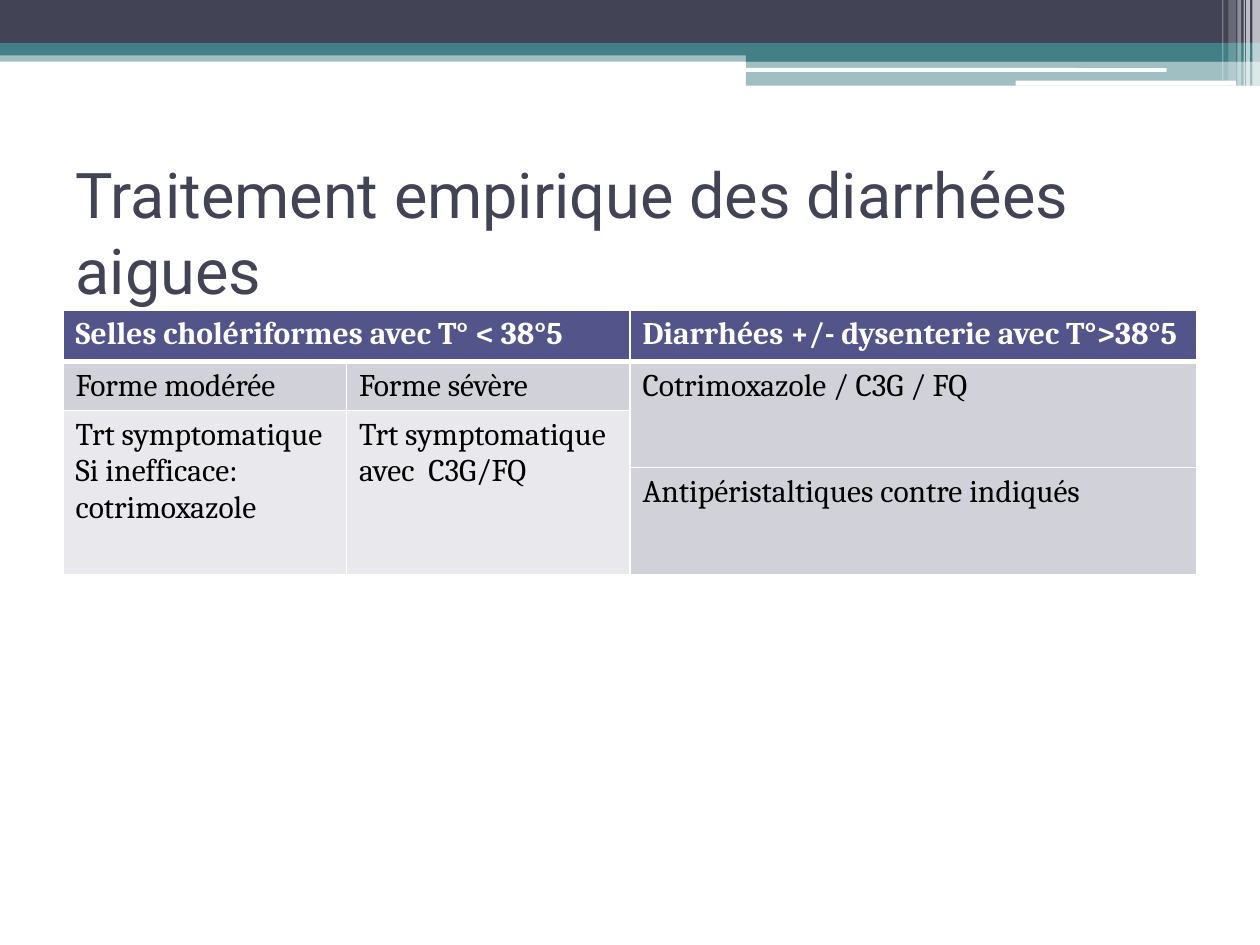
from lxml import etree
from pptx import Presentation
from pptx.dml.color import RGBColor
from pptx.enum.shapes import MSO_SHAPE
from pptx.enum.text import MSO_ANCHOR, MSO_AUTO_SIZE, PP_ALIGN
from pptx.oxml.ns import qn
from pptx.util import Inches, Pt

RECT, ROUNDED = MSO_SHAPE.RECTANGLE, MSO_SHAPE.ROUNDED_RECTANGLE
MIDDLE, LEFT, NO_FIT = MSO_ANCHOR.MIDDLE, PP_ALIGN.LEFT, MSO_AUTO_SIZE.NONE
WHITE = RGBColor(0xFF, 0xFF, 0xFF)
BLACK = RGBColor(0, 0, 0)
SLATE = RGBColor(0x42, 0x44, 0x56)
TEAL = RGBColor(0x43, 0x80, 0x86)
INDIGO = RGBColor(0x53, 0x54, 0x8A)
GREY = RGBColor(0xD1, 0xD1, 0xDA)
PALE = RGBColor(0xE9, 0xE9, 0xED)

TITLE = "Traitement empirique des diarrhées aigues"
COLUMNS = [2.25, 2.25, 4.5]
ROWS = [0.41, 0.39, 0.45, 0.85]
CELLS = [
    (0, 0, 0, 1, INDIGO, ["Selles cholériformes avec T° < 38°5"]),
    (0, 2, 0, 2, INDIGO, ["Diarrhées +/- dysenterie avec T°>38°5"]),
    (1, 0, 1, 0, GREY, ["Forme modérée"]),
    (1, 1, 1, 1, GREY, ["Forme sévère "]),
    (1, 2, 2, 2, GREY, ["Cotrimoxazole / C3G / FQ"]),
    (2, 0, 3, 0, PALE, ["Trt symptomatique ", "Si inefficace: cotrimoxazole "]),
    (2, 1, 3, 1, PALE, ["Trt symptomatique avec  C3G/FQ"]),
    (3, 2, 3, 2, GREY, ["Antipéristaltiques contre indiqués "]),
]
BANDS = [
    (RECT, 0, 0.4, 10, 0.09, TEAL, 50),
    (RECT, 0, 0, 10, 0.34, SLATE, 100),
    (RECT, 0, 0.34, 10, 0.1, TEAL, 100),
    (RECT, 5.92, 0.39, 4.08, 0.1, TEAL, 100),
    (RECT, 5.92, 0.48, 4.08, 0.2, TEAL, 50),
    (ROUNDED, 5.91, 0.54, 3.35, 0.03, WHITE, 100),
    (ROUNDED, 8.06, 0.64, 1.75, 0.04, WHITE, 100),
]
STRIPES = [
    (9.94, 0.06, 0.68, 65),
    (9.89, 0.03, 0.68, 65),
    (9.87, 0.01, 0.68, 60),
    (9.82, 0.03, 0.68, 40),
    (9.75, 0.06, 0.64, 20),
    (9.7, 0.01, 0.64, 30),
]


def add_band(slide, kind, left, top, width, height, color, opacity):
    band = slide.shapes.add_shape(
        kind, Inches(left), Inches(top), Inches(width), Inches(height))
    band.shadow.inherit = False
    band.line.fill.background()
    band.fill.solid()
    band.fill.fore_color.rgb = color
    if opacity < 100:
        tint = band.fill._xPr.find(qn("a:solidFill"))[0]
        etree.SubElement(tint, qn("a:alpha"), val=str(opacity * 1000))


def set_borders(cell, bottom):
    properties = cell._tc.get_or_add_tcPr()
    sides = [("a:lnL", 1), ("a:lnR", 1), ("a:lnT", 1), ("a:lnB", bottom)]
    for place, (side, width) in enumerate(sides):
        border = etree.Element(qn(side), w=str(Pt(width)))
        paint = etree.SubElement(border, qn("a:solidFill"))
        etree.SubElement(paint, qn("a:srgbClr"), val=str(WHITE))
        properties.insert(place, border)


prs = Presentation()
prs.slide_width, prs.slide_height = Inches(10), Inches(7.5)
slide = prs.slides.add_slide(prs.slide_layouts[5])

for band in BANDS:
    add_band(slide, *band)
for left, width, height, opacity in STRIPES:
    add_band(slide, RECT, left, 0, width, height, WHITE, opacity)

title = slide.shapes.title
title.left, title.top = Inches(0.5), Inches(1.25)
title.width, title.height = Inches(9), Inches(1.17)
title.text_frame.text = TITLE
title.text_frame.auto_size = NO_FIT
title.text_frame.vertical_anchor = MIDDLE
heading = title.text_frame.paragraphs[0]
heading.alignment = LEFT
heading.font.name, heading.font.size = "Roboto", Pt(36)
heading.font.color.rgb = SLATE

treatments = slide.shapes.add_table(
    len(ROWS), len(COLUMNS), Inches(0.5), Inches(2.46),
    Inches(sum(COLUMNS)), Inches(sum(ROWS))).table
for column, width in zip(treatments.columns, COLUMNS):
    column.width = Inches(width)
for row, height in zip(treatments.rows, ROWS):
    row.height = Inches(height)

for top, left, bottom, right, color, lines in CELLS:
    cell = treatments.cell(top, left)
    if (top, left) != (bottom, right):
        cell.merge(treatments.cell(bottom, right))
    cell.text = "\n".join(lines)
    header = top == 0
    for paragraph in cell.text_frame.paragraphs:
        paragraph.font.name, paragraph.font.size = "Cambria", Pt(18)
        paragraph.font.bold = header
        paragraph.font.color.rgb = WHITE if header else BLACK
    for r in range(top, bottom + 1):
        for c in range(left, right + 1):
            part = treatments.cell(r, c)
            part.fill.solid()
            part.fill.fore_color.rgb = color
            set_borders(part, 3 if header else 1)

prs.save("out.pptx")
